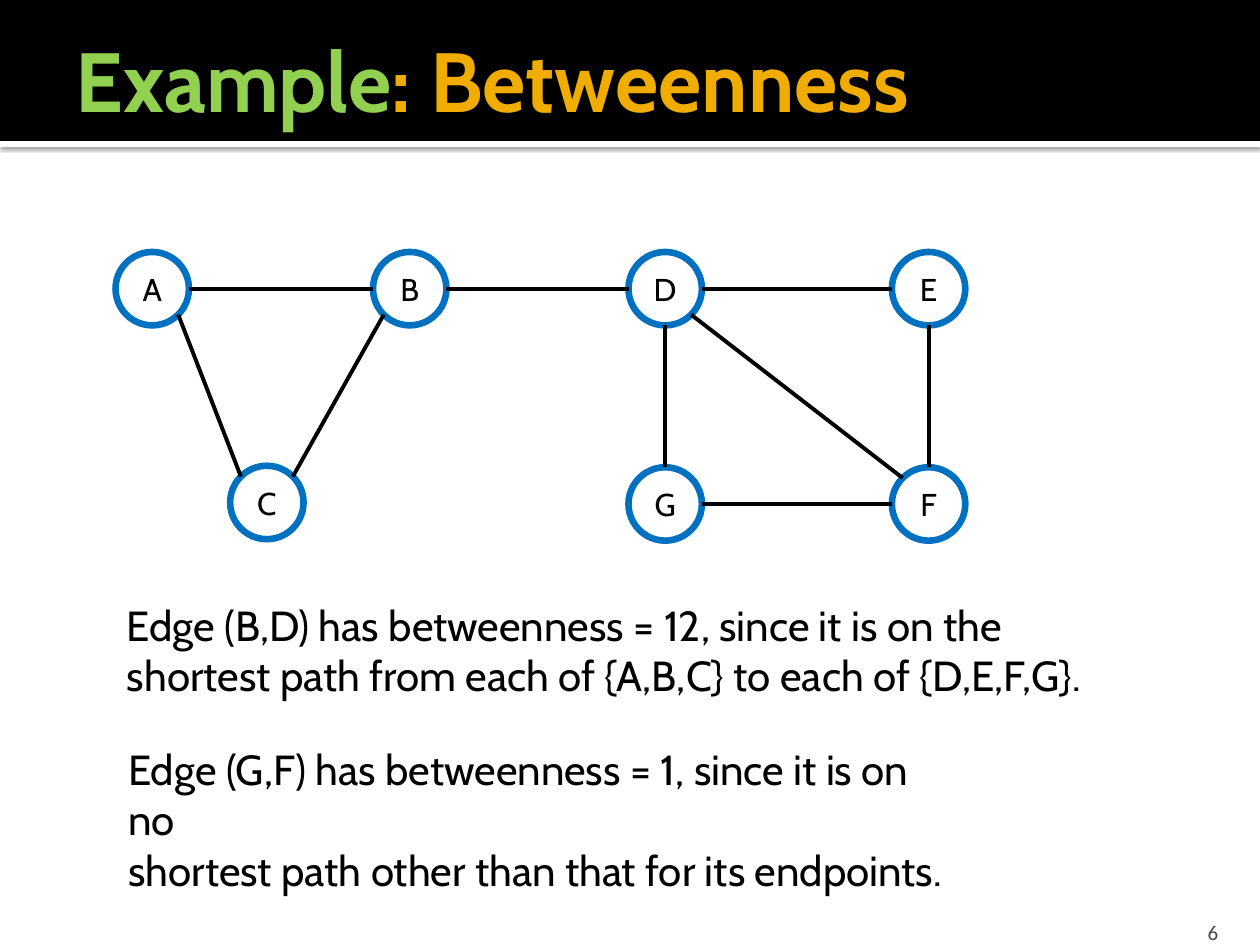
"""Build the slide on edge betweenness with its seven-node graph."""
from math import sqrt

from lxml.etree import SubElement as Sub
from pptx import Presentation as Deck
from pptx.dml.color import RGBColor as Rgb
from pptx.enum.shapes import MSO_CONNECTOR as Link, MSO_SHAPE as Kind
from pptx.enum.text import MSO_ANCHOR as Anchor, MSO_AUTO_SIZE as Fit, PP_ALIGN as Align
from pptx.oxml.ns import qn
from pptx.util import Cm, Pt

BLACK = Rgb(0, 0, 0)
WHITE = Rgb(255, 255, 255)
GREEN = Rgb(0x92, 0xD0, 0x50)
GOLD = Rgb(0xF0, 0xAD, 0x00)
BLUE = Rgb(0x00, 0x70, 0xC0)
GREY = Rgb(0x45, 0x45, 0x45)

RAD = 0.74
TOP, LOW = 5.82, 10.16
NODES = {
    "A": (3.07, TOP), "B": (8.26, TOP), "C": (5.38, 10.13), "D": (13.41, TOP),
    "E": (18.72, TOP), "F": (18.72, LOW), "G": (13.41, LOW),
}
EDGES = ("AB", "AC", "CB", "BD", "DE", "DG", "EF", "GF", "DF")
NOTES = (
    (2.31, 11.96, 20.29, (
        "Edge (B,D) has betweenness = 12, since it is on the "
        "shortest path from each of {A,B,C} to each of {D,E,F,G}.",)),
    (2.34, 14.86, 17.32, (
        "Edge (G,F) has betweenness = 1, since it is on no",
        "shortest path other than that for its endpoints.")),
)


def add_run(para, text, size, color, font="Cabin", bold=False):
    run = para.add_run()
    run.text = text
    run.font.name = font
    run.font.size = Pt(size)
    run.font.bold = bold
    run.font.color.rgb = color


def add_box(slide, x, y, w, h, anchor=Anchor.TOP):
    frame = slide.shapes.add_textbox(Cm(x), Cm(y), Cm(w), Cm(h)).text_frame
    frame.word_wrap = True
    frame.vertical_anchor = anchor
    return frame


def add_bar(slide, y, h, color):
    bar = slide.shapes.add_shape(Kind.RECTANGLE, 0, Cm(y), Cm(25.4), Cm(h))
    bar.shadow.inherit = False
    bar.fill.solid()
    bar.fill.fore_color.rgb = color
    bar.line.fill.background()
    return bar


def add_shade(bar):
    list_ = bar.element.spPr.find(qn("a:effectLst"))
    shade = Sub(list_, qn("a:outerShdw"), blurRad=str(Pt(2.5)),
                dist=str(Pt(0.8)), dir="5400000", algn="tl", rotWithShape="0")
    tint = Sub(shade, qn("a:srgbClr"), val=str(BLACK))
    Sub(tint, qn("a:alpha"), val="60000")


def add_node(slide, name):
    x, y = NODES[name]
    node = slide.shapes.add_shape(
        Kind.OVAL, Cm(x - RAD), Cm(y - RAD), Cm(2 * RAD), Cm(2 * RAD))
    node.shadow.inherit = False
    node.fill.background()
    node.line.color.rgb = BLUE
    node.line.width = Pt(3.78)
    frame = node.text_frame
    frame.word_wrap = False
    frame.vertical_anchor = Anchor.MIDDLE
    para = frame.paragraphs[0]
    para.alignment = Align.CENTER
    add_run(para, name, 18, BLACK)


def sign(num):
    return (num > 0) - (num < 0)


def add_edge(slide, pair):
    (x1, y1), (x2, y2) = (NODES[name] for name in pair)
    dx, dy = sign(x2 - x1), sign(y2 - y1)
    step = RAD / sqrt(dx * dx + dy * dy)
    edge = slide.shapes.add_connector(
        Link.STRAIGHT, Cm(x1 + dx * step), Cm(y1 + dy * step),
        Cm(x2 - dx * step), Cm(y2 - dy * step))
    edge.line.color.rgb = BLACK
    edge.line.width = Pt(2.25)
    Sub(edge.element.spPr, qn("a:effectLst"))


def add_title(slide):
    frame = add_box(slide, 1.27, 0.43, 24.13, 2.34, Anchor.MIDDLE)
    para = frame.paragraphs[0]
    add_run(para, "Example", 48, GREEN, bold=True)
    add_run(para, ": Betweenness", 48, GOLD, bold=True)


def add_note(slide, x, y, w, lines):
    frame = add_box(slide, x, y, w, 2.31)
    frame.auto_size = Fit.SHAPE_TO_FIT_TEXT
    for num, line in enumerate(lines):
        para = frame.add_paragraph() if num else frame.paragraphs[0]
        add_run(para, line, 24, BLACK)


def add_page(slide):
    frame = add_box(slide, 22.78, 18.29, 2.03, 0.76, Anchor.BOTTOM)
    frame.margin_bottom = 0
    para = frame.paragraphs[0]
    para.alignment = Align.RIGHT
    add_run(para, "6", 12, GREY, "Calibri")


def main():
    deck = Deck()
    deck.slide_width, deck.slide_height = Cm(25.4), Cm(19.05)
    slide = deck.slides.add_slide(deck.slide_layouts[6])
    add_shade(add_bar(slide, 2.84, 0.13, WHITE))
    add_bar(slide, 0, 2.84, BLACK)
    add_title(slide)
    add_page(slide)
    for name in NODES:
        add_node(slide, name)
    for pair in EDGES:
        add_edge(slide, pair)
    for note in NOTES:
        add_note(slide, *note)
    deck.save("out.pptx")


if __name__ == "__main__":
    main()
